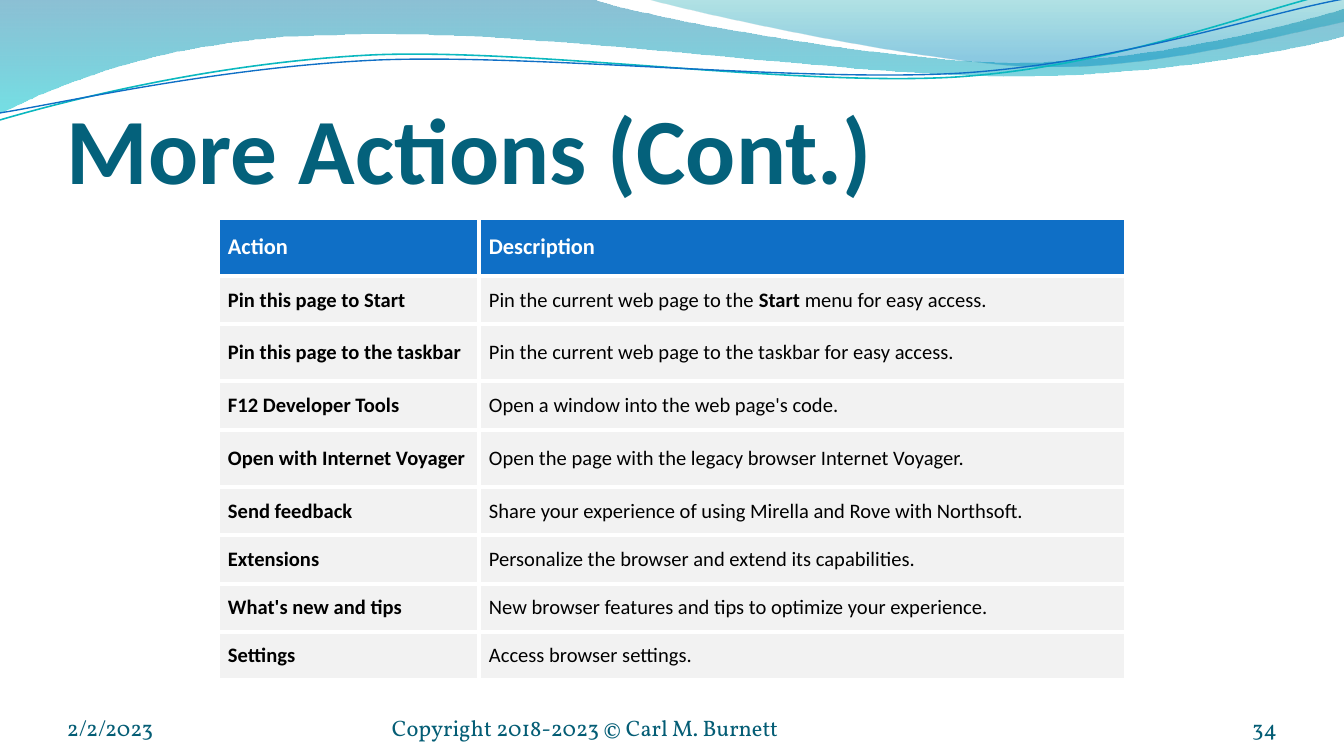
from lxml import etree
from pptx import Presentation
from pptx.dml.color import RGBColor
from pptx.enum.text import MSO_ANCHOR, MSO_AUTO_SIZE, PP_ALIGN
from pptx.oxml.ns import qn
from pptx.util import Emu, Pt

LEFT, RIGHT = PP_ALIGN.LEFT, PP_ALIGN.RIGHT
BOTTOM, MIDDLE = MSO_ANCHOR.BOTTOM, MSO_ANCHOR.MIDDLE
NO_AUTOFIT = MSO_AUTO_SIZE.NONE

EMU_PER_PX = 914400 / 134.4
TITLE_ONLY = 5

COLORS = {
    "title": "04617B", "footer": "045D75", "header": "0F6FC6", "row": "F2F2F2",
    "white": "FFFFFF", "black": "000000", "teal line": "0AB8BF", "blue line": "0F6FC6",
    "deep blue": "0074A1", "cyan": "00C6CF", "teal": "00A1A9", "sky": "008BBF",
}

# Each step is a straight line (x, y) or a cubic curve (two controls and an end point).
BANDS = [
    ((0, 0), [(591, -1), (640, 17, 892, 63, 1019, 63), (1146, 63, 1288, 26, 1344, 9),
              (1345, 36), (1321, 44, 1169, 77, 1003, 77), (836, 75, 513, 28, 345, 35),
              (173, 36, 62, 83, -1, 114)],
     [(0, "deep blue", 45), (1, "cyan", 55)]),
    ((644, -1), [(685, 11, 917, 62, 1034, 66), (1150, 70, 1292, 32, 1344, 22), (1344, 0)],
     [(0, "teal", 30), (0.8, "sky", 45)]),
]
STRANDS = [
    ((0, 120), [(65, 101, 212, 63, 372, 55), (532, 48, 796, 87, 957, 77),
                (1120, 66, 1262, 8, 1341, -9)], "teal line", 0.85),
    ((0, 113), [(63, 103, 220, 67, 380, 60), (542, 54, 802, 83, 964, 73),
                (1124, 62, 1265, 13, 1344, -1)], "blue line", 0.75),
]

COLUMN_WIDTHS = [261, 647]
ACTIONS = [
    (58, "Action", "Description"),
    (48, "Pin this page to Start", "Pin the current web page to the *Start* menu for easy access."),
    (57, "Pin this page to the taskbar", "Pin the current web page to the taskbar for easy access."),
    (49, "F12 Developer Tools", "Open a window into the web page's code."),
    (57, "Open with Internet Voyager", "Open the page with the legacy browser Internet Voyager."),
    (48, "Send feedback", "Share your experience of using Mirella and Rove with Northsoft."),
    (49, "Extensions", "Personalize the browser and extend its capabilities."),
    (48, "What's new and tips", "New browser features and tips to optimize your experience."),
    (48, "Settings", "Access browser settings."),
]


def px(value):
    return Emu(round(value * EMU_PER_PX))


def color(name):
    return RGBColor.from_string(COLORS[name])


def set_font(font, name, size, color_name, bold=False):
    font.name, font.size, font.bold = name, Pt(size), bold
    font.color.rgb = color(color_name)


def set_margins(owner, left, top, right, bottom):
    owner.margin_left, owner.margin_top = px(left), px(top)
    owner.margin_right, owner.margin_bottom = px(right), px(bottom)


def add_outline(slide, left, top, start, steps, close):
    points = [(px(left + step[i]), px(top + step[i + 1]))
              for step in [start, *steps] for i in range(0, len(step), 2)]
    builder = slide.shapes.build_freeform(*points[0])
    builder.add_line_segments(points[1:], close=close)
    shape = builder.convert_to_shape()
    shape.shadow.inherit = False
    segments = iter(list(shape._element.iter(qn("a:lnTo"))))
    for step in steps:
        first = next(segments)
        if len(step) == 6:
            curve = etree.Element(qn("a:cubicBezTo"))
            first.addprevious(curve)
            for segment in (first, next(segments), next(segments)):
                curve.append(segment[0])
                segment.getparent().remove(segment)
    return shape


def add_waves(slide, left, top):
    for start, steps, stops in BANDS:
        band = add_outline(slide, left, top, start, steps, True)
        band.line.fill.background()
        band.fill.gradient()
        band.fill.gradient_angle = 270
        for stop, (position, name, _) in zip(band.fill.gradient_stops, stops):
            stop.position = position
            stop.color.rgb = color(name)
        tints = band._element.spPr.iter(qn("a:srgbClr"))
        for tint, (_, _, opacity) in zip(tints, stops):
            etree.SubElement(tint, qn("a:alpha"), val=str(opacity * 1000))
    for start, steps, name, width in STRANDS:
        strand = add_outline(slide, left, top, start, steps, False)
        strand.fill.background()
        strand.line.color.rgb = color(name)
        strand.line.width = Pt(width)


def add_title(slide, left, top, width, height, text):
    title = slide.shapes.title
    title.left, title.top, title.width, title.height = map(px, (left, top, width, height))
    frame = title.text_frame
    frame.text = text
    frame.auto_size = NO_AUTOFIT
    frame.vertical_anchor = BOTTOM
    set_margins(frame, 0, 7, 0, 0)
    paragraph = frame.paragraphs[0]
    paragraph.alignment = LEFT
    set_font(paragraph.font, "Calibri", 50, "title", True)
    slide.shapes._spTree.append(title._element)


def add_borders(cell):
    properties = cell._tc.get_or_add_tcPr()
    for index, side in enumerate(("lnL", "lnR", "lnT", "lnB")):
        line = etree.Element(qn(f"a:{side}"), w=str(Pt(2.25)))
        fill = etree.SubElement(line, qn("a:solidFill"))
        etree.SubElement(fill, qn("a:srgbClr"), val=COLORS["white"])
        properties.insert(index, line)


def fill_cell(cell, text, is_header, is_bold):
    cell.fill.solid()
    cell.fill.fore_color.rgb = color("header" if is_header else "row")
    cell.vertical_anchor = MIDDLE
    set_margins(cell, 10, 5, 10, 5)
    add_borders(cell)
    paragraph = cell.text_frame.paragraphs[0]
    paragraph.space_before = Pt(2)
    size, name = (12, "white") if is_header else (11, "black")
    set_font(paragraph.font, "Calibri", size, name, is_bold)
    for index, part in enumerate(text.split("*")):
        run = paragraph.add_run()
        run.text = part
        if index % 2:
            run.font.bold = True


def add_actions_table(slide, left, top):
    heights = [height for height, *_ in ACTIONS]
    frame = slide.shapes.add_table(len(ACTIONS), len(COLUMN_WIDTHS), px(left), px(top),
                                   px(sum(COLUMN_WIDTHS)), px(sum(heights)))
    table = frame.table
    table.horz_banding = False
    for column, width in zip(table.columns, COLUMN_WIDTHS):
        column.width = px(width)
    for row_index, (height, *texts) in enumerate(ACTIONS):
        table.rows[row_index].height = px(height)
        for column_index, text in enumerate(texts):
            is_header = row_index == 0
            fill_cell(table.cell(row_index, column_index), text, is_header,
                      is_header or column_index == 0)


def add_footer(slide, left, top, width, height):
    parts = [
        (0, 313, "2/2/2023", LEFT),
        (325, 493, "Copyright 2018-2023 © Carl M. Burnett", LEFT),
        (width - 112, 112, "34", RIGHT),
    ]
    for offset, part_width, text, alignment in parts:
        box = slide.shapes.add_textbox(px(left + offset), px(top), px(part_width), px(height))
        frame = box.text_frame
        frame.word_wrap = True
        frame.vertical_anchor = BOTTOM
        set_margins(frame, 0, 0, 0, 0)
        paragraph = frame.paragraphs[0]
        paragraph.text = text
        paragraph.alignment = alignment
        set_font(paragraph.font, "Vollkorn", 12, "footer")


def main():
    presentation = Presentation()
    presentation.slide_width, presentation.slide_height = px(1344), px(756)
    slide = presentation.slides.add_slide(presentation.slide_layouts[TITLE_ONLY])
    add_waves(slide, 0, 0)
    add_title(slide, 67, 77, 1220, 126, "More Actions (Cont.)")
    add_actions_table(slide, 218, 218)
    add_footer(slide, 67, 701, 1210, 40)
    presentation.save("out.pptx")


if __name__ == "__main__":
    main()
